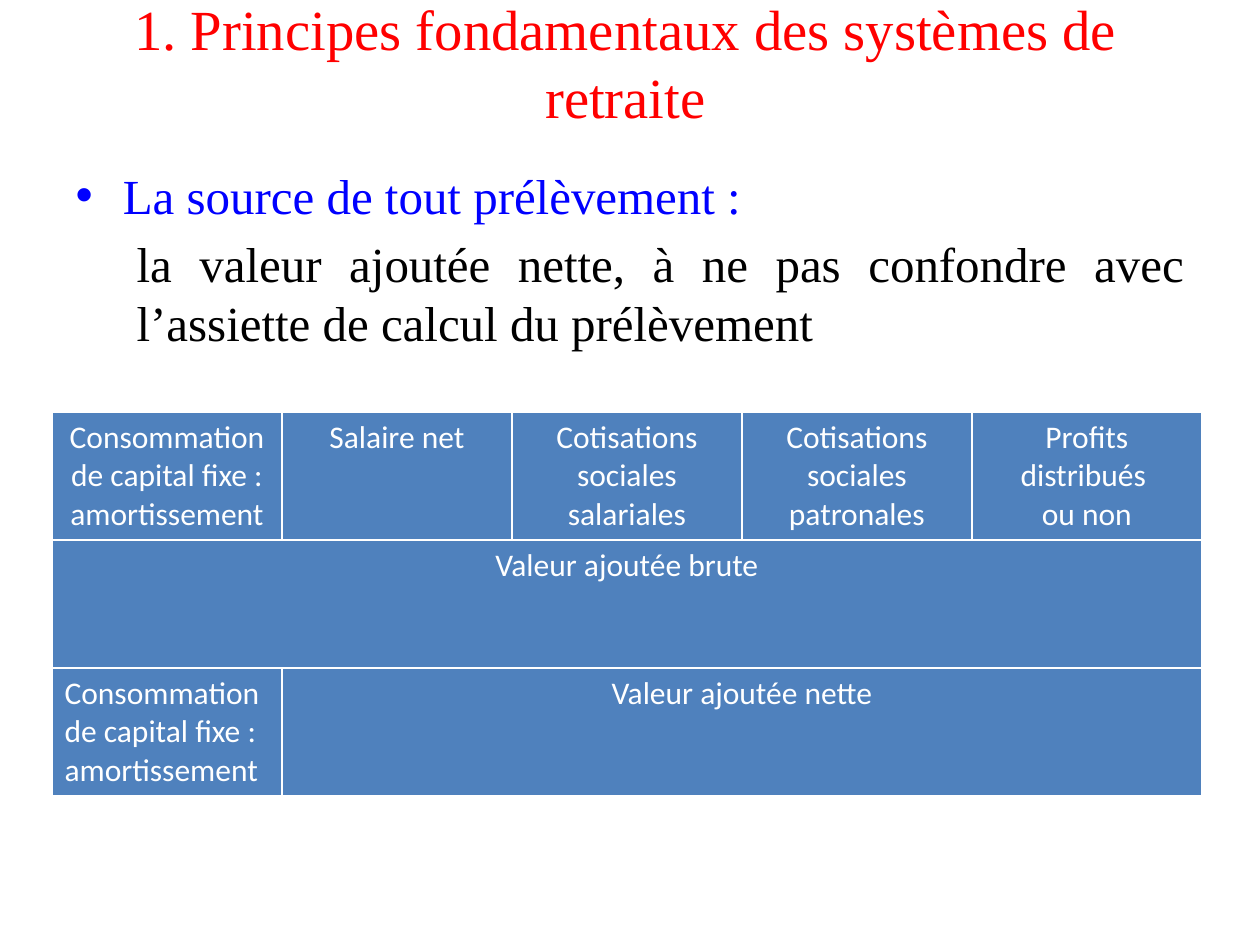
from pptx import Presentation
from pptx.dml.color import RGBColor as RGB
from pptx.enum.text import MSO_ANCHOR as ANCHOR, MSO_AUTO_SIZE as FIT, PP_ALIGN as AL
from pptx.oxml import parse_xml
from pptx.oxml.ns import nsdecls
from pptx.util import Emu, Pt

PX = 914400 // 126
COLORS = {"title": "FF0000", "lead": "0000FF", "body": "000000",
          "cell": "4F81BD", "white": "FFFFFF"}
SERIF, SANS = "Times New Roman", "Calibri"


def px(n):
    return Emu(n * PX)


def write(p, text, font=SERIF, size=28, color="body", align=AL.JUSTIFY):
    p.alignment = align
    r = p.add_run()
    r.text = text
    r.font.name = font
    r.font.size = Pt(size)
    r.font.color.rgb = RGB.from_string(COLORS[color])


class Deck:
    def __init__(self):
        self.prs = Presentation()
        self.prs.slide_width, self.prs.slide_height = px(1260), px(945)
        self.s = self.prs.slides.add_slide(self.prs.slide_layouts[1])

    def place(self, sp, x, y, w, h):
        sp.left, sp.top, sp.width, sp.height = map(px, (x, y, w, h))
        tf = sp.text_frame
        tf.word_wrap = True
        tf.auto_size = FIT.NONE
        return tf

    def title(self, text, *box):
        tf = self.place(self.s.shapes.title, *box)
        tf.vertical_anchor = ANCHOR.MIDDLE
        write(tf.paragraphs[0], text, size=32.4, color="title", align=AL.CENTER)

    def body(self, lead, detail, *box):
        tf = self.place(self.s.placeholders[1], *box)
        write(tf.paragraphs[0], lead, color="lead")
        p = tf.add_paragraph()
        write(p, detail)
        pPr = p._p.get_or_add_pPr()
        pPr.set("marL", str(px(61)))
        pPr.set("indent", "0")
        pPr.append(parse_xml(f"<a:buNone {nsdecls('a')}/>"))

    def borders(self, cell):
        tcPr = cell._tc.get_or_add_tcPr()
        for i, side in enumerate(("lnL", "lnR", "lnT", "lnB")):
            tcPr.insert(i, parse_xml(
                f'<a:{side} {nsdecls("a")} w="{Pt(1)}"><a:solidFill>'
                f'<a:srgbClr val="{COLORS["white"]}"/></a:solidFill></a:{side}>'))

    def table(self, rows, x, y, col_w, row_h):
        n = len(rows[0])
        table = self.s.shapes.add_table(
            len(rows), n, px(x), px(y), px(col_w * n), px(row_h * len(rows))).table
        for row in table.rows:
            for cell in row.cells:
                cell.fill.solid()
                cell.fill.fore_color.rgb = RGB.from_string(COLORS["cell"])
                self.borders(cell)
        for i, row in enumerate(rows):
            col = 0
            for text, span, align in row:
                cell = table.cell(i, col)
                if span > 1:
                    cell.merge(table.cell(i, col + span - 1))
                tf = cell.text_frame
                for k, line in enumerate(text.split("\n")):
                    p = tf.add_paragraph() if k else tf.paragraphs[0]
                    write(p, line, font=SANS, size=18, color="white", align=align)
                col += span
        for row in table.rows:
            row.height = px(row_h)


def main():
    deck = Deck()
    deck.title("1. Principes fondamentaux des systèmes de retraite", 39, 9, 1173, 105)
    deck.body("La source de tout prélèvement : ",
              "la valeur ajoutée nette, à ne pas confondre avec "
              "l’assiette de calcul du prélèvement", 63, 159, 1134, 786)
    capital = "Consommation de capital fixe : amortissement"
    parts = [capital, "Salaire net", "Cotisations sociales salariales",
             "Cotisations sociales patronales", "Profits distribués \nou non"]
    deck.table([[(text, 1, AL.CENTER) for text in parts],
                [("Valeur ajoutée brute", 5, AL.CENTER)],
                [(capital, 1, AL.LEFT), ("Valeur ajoutée nette", 4, AL.CENTER)]],
               52, 412, 230, 128)
    deck.prs.save("out.pptx")


if __name__ == "__main__":
    main()
